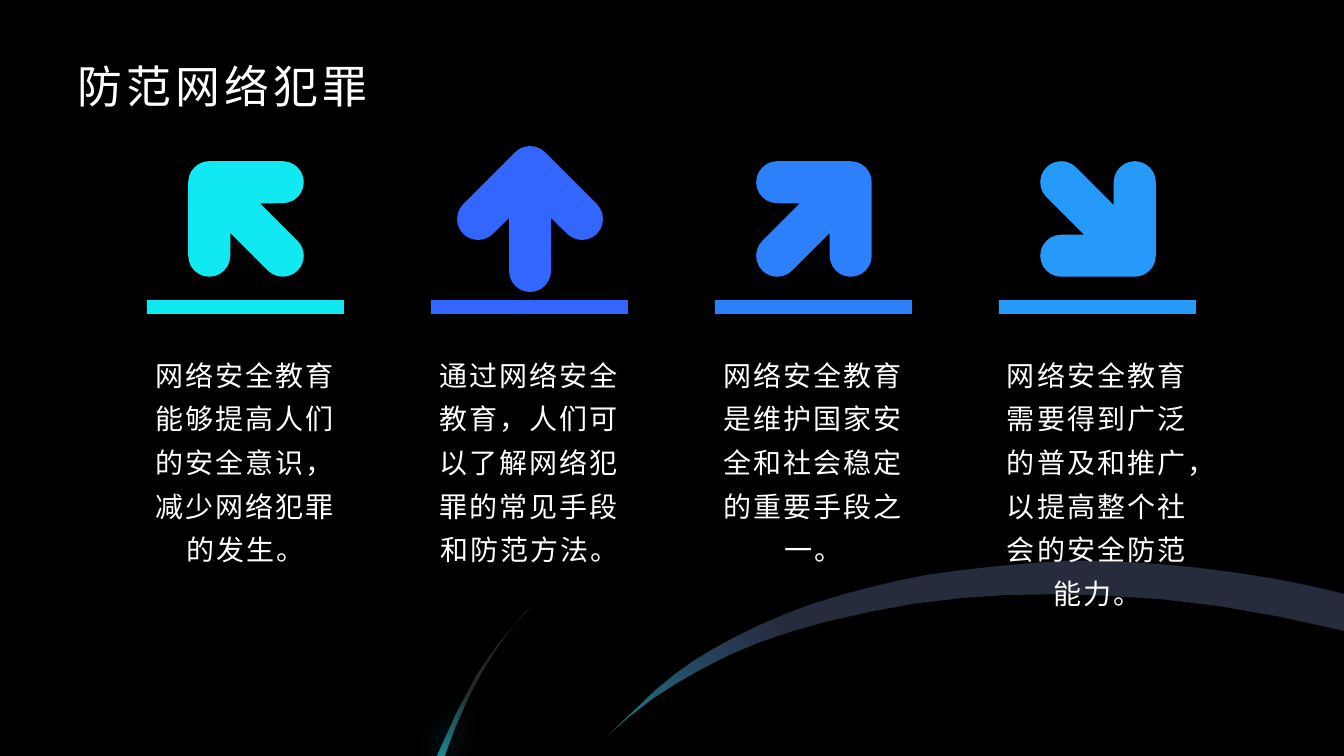
import math
import pptx
import pptx.dml.color
import pptx.enum.shapes
import pptx.enum.text
import pptx.oxml
import pptx.oxml.ns
import pptx.util

# Content
TITLE = "防范网络犯罪"
LEFT, RIGHT = 1, -1
COLUMNS = [  # colour, arrow side, rotation in degrees, text
    ("10E9F2", LEFT, 45, "网络安全教育能够提高人们的安全意识，减少网络犯罪的发生。"),
    ("3366FF", LEFT, 90, "通过网络安全教育，人们可以了解网络犯罪的常见手段和防范方法。"),
    ("2C80FC", RIGHT, 315, "网络安全教育是维护国家安全和社会稳定的重要手段之一。"),
    ("259AFA", RIGHT, 45, "网络安全教育需要得到广泛的普及和推广，以提高整个社会的安全防范能力。"),
]

# Decorative sweeps: two edges each, in px
BAND = [
    [(610, 734), (641, 704), (675, 674), (715, 648), (760, 625), (812, 604),
     (868, 588), (927, 575), (990, 567), (1047, 562), (1086, 561), (1143, 563),
     (1199, 568), (1250, 575), (1291, 582), (1344, 594)],
    [(1344, 631), (1218, 606), (1111, 596), (1008, 595), (913, 604),
     (826, 622), (758, 643), (700, 670), (650, 701), (610, 734)],
]
STREAK = [
    [(530, 608), (499, 645), (469, 697), (445, 756)],
    [(437, 756), (477, 674), (514, 625), (530, 608)],
]
# Stops: position, colour, opacity in percent
SWEEPS = [
    (BAND, 45, [(0, "10E9F2", 50), (31, "3366FF", 10)]),
    (STREAK, 270, [(55, "10E9F2", 0), (100, "10E9F2", 50)]),
]

# Layout in px
PITCH = 284
ARROW_X, ARROW_Y, ARM, RADIUS = 246, 219, 52, 21
BAR_LEFT, BAR_TOP, BAR_W, BAR_H = 147, 300, 197, 14
TEXT_LEFT, TEXT_TOP, TEXT_W, TEXT_H = 132, 343, 227, 346


def px(n):
    return round(n * 914400 / 100.8)


def rgb(value):
    return pptx.dml.color.RGBColor.from_string(value)


def write(tf, text, size, font, spacing, align, anchor, line=1.0):
    tf.word_wrap = True
    tf.auto_size = pptx.enum.text.MSO_AUTO_SIZE.NONE
    tf.vertical_anchor = anchor
    p = tf.paragraphs[0]
    p.alignment, p.line_spacing = align, line
    r = p.add_run()
    r.text = text
    r.font.size, r.font.name = pptx.util.Pt(size), font
    r.font.color.rgb = rgb("FFFFFF")
    rpr = r.font._element
    rpr.set("lang", "zh-CN")
    rpr.set("spc", str(round(spacing * 100)))


def plain(sp, color):
    sp.shadow.inherit = False
    sp.line.fill.background()
    sp.fill.solid()
    sp.fill.fore_color.rgb = rgb(color)
    return sp


def outline(points, color):
    points = [(px(x), px(y)) for x, y in points]
    builder = s.shapes.build_freeform(*points[0])
    builder.add_line_segments(points[1:], close=True)
    return plain(builder.convert_to_shape(), color)


def beyond(a, b, c):
    """Node that continues the bend c, b, a."""
    return tuple(3 * a[k] - 3 * b[k] + c[k] for k in (0, 1))


def spline(nodes, steps=2):
    """Smooth curve through all nodes."""
    ext = [beyond(*nodes[:3]), *nodes, beyond(*nodes[:-4:-1])]
    curve = []
    for a, b, c, d in zip(ext, ext[1:], ext[2:], ext[3:]):
        for t in (i / steps for i in range(steps)):
            curve.append(tuple(
                b[k] + t / 2 * (c[k] - a[k]
                + t * (2 * a[k] - 5 * b[k] + 4 * c[k] - d[k])
                + t * t * (3 * (b[k] - c[k]) + d[k] - a[k]))
                for k in (0, 1)))
    return curve + [nodes[-1]]


def arc(x, y, start, end):
    angles = [math.radians(a) for a in range(start, end + 1, 15)]
    return [(x + RADIUS * math.cos(a), y + RADIUS * math.sin(a)) for a in angles]


def fade(sp, angle, stops):
    sp.fill.gradient()
    sp.fill.gradient_angle = angle
    for stop, (pos, color, opacity) in zip(sp.fill.gradient_stops, stops):
        stop.position = pos / 100
        stop.color.rgb = rgb(color)
    colors = sp._element.spPr.iter(pptx.oxml.ns.qn("a:srgbClr"))
    for clr, (pos, color, opacity) in zip(list(colors), stops):
        clr.append(clr.makeelement(pptx.oxml.ns.qn("a:alpha"), {"val": str(opacity * 1000)}))


def glow(sp, color, blur):
    effects = sp._element.spPr.find(pptx.oxml.ns.qn("a:effectLst"))
    effects.append(pptx.oxml.parse_xml(
        f'<a:outerShdw {pptx.oxml.ns.nsdecls("a")} blurRad="{pptx.util.Pt(blur)}" '
        f'dist="0" algn="ctr" rotWithShape="0"><a:srgbClr val="{color}"/></a:outerShdw>'))


prs = pptx.Presentation()
prs.slide_width, prs.slide_height = px(1344), px(756)
s = prs.slides.add_slide(prs.slide_layouts[5])
s.background.fill.solid()
s.background.fill.fore_color.rgb = rgb("000000")

# Sweeps: dark base below, fading colour above
curves = [spline(a) + spline(b) for (a, b), angle, stops in SWEEPS]
for curve in curves:
    outline(curve, "262626")
for curve, (edges, angle, stops) in zip(curves, SWEEPS):
    sp = outline(curve, "262626")
    fade(sp, angle, stops)
glow(sp, "1EB5F7", 20)

# Title
title = s.shapes.title
title.left, title.top, title.width, title.height = px(67), px(51), px(1210), px(62)
title.text_frame.margin_top = title.text_frame.margin_bottom = 0
write(title.text_frame, TITLE, 32, "Cabin", 3,
      pptx.enum.text.PP_ALIGN.LEFT, pptx.enum.text.MSO_ANCHOR.BOTTOM)

# Left-pointing arrow around its own centre
arrow = (arc(-ARM, 0, 135, 225) + arc(0, -ARM, 225, 405) + [(-1, -RADIUS)]
         + arc(ARM, 0, -90, 90) + [(-1, RADIUS)] + arc(0, ARM, -45, 135))

# Columns: arrow, text, bar
for i, (color, side, turn, text) in enumerate(COLUMNS):
    shift = i * PITCH
    sp = outline([(ARROW_X + shift + side * u, ARROW_Y + v) for u, v in arrow], color)
    sp.rotation = turn
    box = s.shapes.add_textbox(px(TEXT_LEFT + shift), px(TEXT_TOP), px(TEXT_W), px(TEXT_H))
    write(box.text_frame, text, 20, "Lato", 1.5,
          pptx.enum.text.PP_ALIGN.CENTER, pptx.enum.text.MSO_ANCHOR.TOP, 1.3)
    plain(s.shapes.add_shape(pptx.enum.shapes.MSO_SHAPE.RECTANGLE, px(BAR_LEFT + shift),
                             px(BAR_TOP), px(BAR_W), px(BAR_H)), color)

prs.save("out.pptx")
